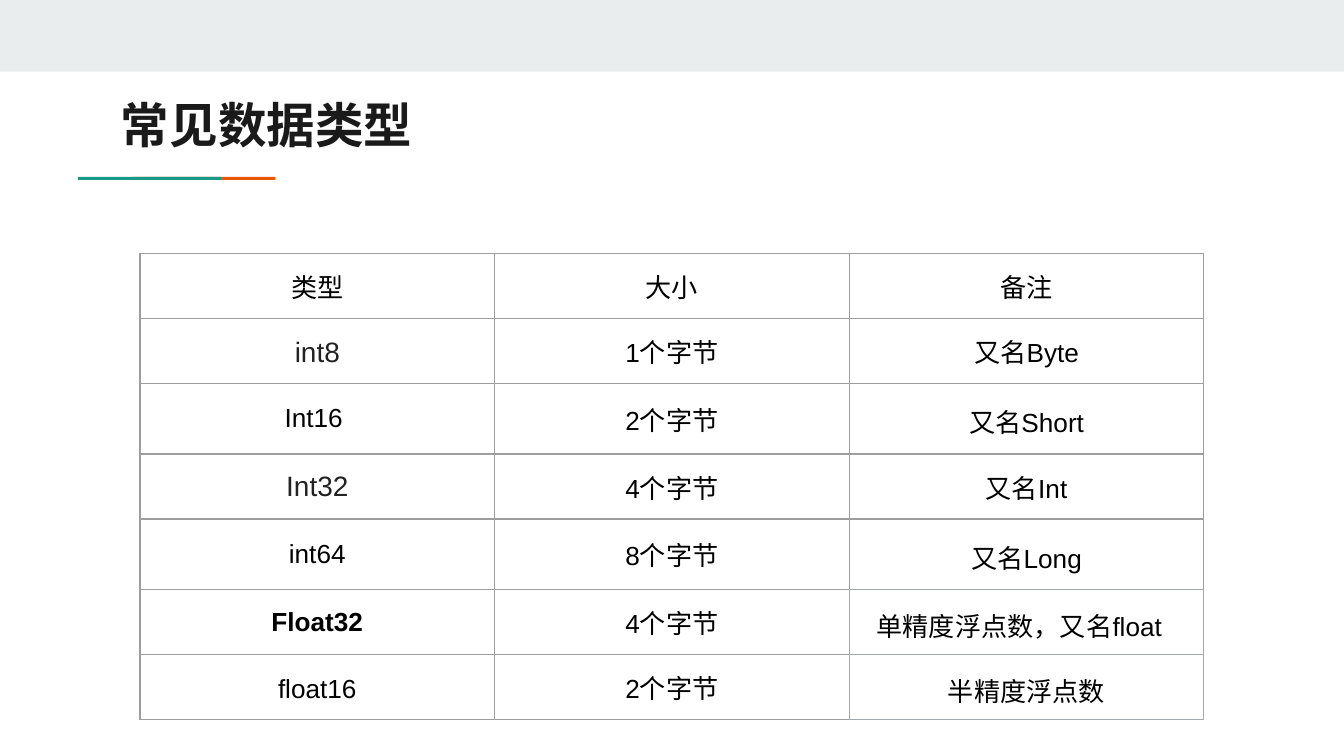
from lxml.etree import SubElement
from pptx import Presentation
from pptx.dml.color import RGBColor
from pptx.enum.shapes import MSO_SHAPE
from pptx.enum.text import MSO_ANCHOR, MSO_AUTO_SIZE, PP_ALIGN
from pptx.oxml.ns import qn
from pptx.util import Pt

# Content
TITLE = "常见数据类型"
ROWS = [
    ("类型", "大小", "备注"),
    ("int8", "1个字节", "又名Byte"),
    ("Int16", "2个字节", "又名Short"),
    ("Int32", "4个字节", "又名Int"),
    ("int64", "8个字节", "又名Long"),
    ("Float32", "4个字节", "单精度浮点数，又名float"),
    ("float16", "2个字节", "半精度浮点数"),
]

# Cells that differ from the rest, as (row, column)
LARGER_GREY = {(1, 0), (3, 0)}
BOLD = {(5, 0)}
LOOSE = {(1, 0), (2, 2), (4, 2), (5, 2), (6, 0), (6, 2)}
COOL = {(5, 2), (6, 2)}
EXTRA_RIGHT_MARGIN = {(2, 0): 3.9, (5, 2): 7.8}

# Style
BAND = RGBColor(0xE9, 0xED, 0xEE)
TEAL = RGBColor(0x1A, 0x99, 0x88)
ORANGE = RGBColor(0xEB, 0x56, 0x00)
TITLE_INK = RGBColor(0x1A, 0x1A, 0x1A)
BLACK = RGBColor(0x00, 0x00, 0x00)
GREY = RGBColor(0x22, 0x22, 0x22)
BORDER = RGBColor(0x9E, 0x9E, 0x9E)
COOL_BORDER = RGBColor(0xA2, 0xA9, 0xB1)

# Geometry in points
TABLE_LEFT, TABLE_TOP = 75, 135.7
COLUMN_WIDTH, ROW_HEIGHT = 190, 30.2
BARS = [  # left, top, width, height, colour; teal overlaps orange
    (0, 0, 720, 38.4, BAND),
    (71, 94.8, 76.6, 1.6, ORANGE),
    (41.8, 94.8, 76.6, 1.6, TEAL),
]


def add_bar(slide, left, top, width, height, color):
    bar = slide.shapes.add_shape(
        MSO_SHAPE.RECTANGLE, Pt(left), Pt(top), Pt(width), Pt(height))
    bar.shadow.inherit = False
    bar.fill.solid()
    bar.fill.fore_color.rgb = color
    bar.line.fill.background()


def set_margins(target, horizontal, vertical, extra_right=0):
    target.margin_left = Pt(horizontal)
    target.margin_right = Pt(horizontal + extra_right)
    target.margin_top = target.margin_bottom = Pt(vertical)


def format_run(run, font_name, size, color, bold):
    run.font.name = font_name
    run.font.size = Pt(size)
    run.font.color.rgb = color
    run.font.bold = bold


def border_color(row, column, side):
    """A cool cell colours its own edges and those it shares."""
    row_step, column_step = {
        "lnL": (0, -1), "lnR": (0, 1), "lnT": (-1, 0), "lnB": (1, 0)}[side]
    neighbour = (row + row_step, column + column_step)
    return COOL_BORDER if COOL & {(row, column), neighbour} else BORDER


def set_borders(cell, row, column):
    properties = cell._tc.get_or_add_tcPr()
    for side in ("lnL", "lnR", "lnT", "lnB"):
        line = SubElement(properties, qn(f"a:{side}"), w=str(Pt(0.75)))
        fill = SubElement(line, qn("a:solidFill"))
        SubElement(fill, qn("a:srgbClr"),
                   val=str(border_color(row, column, side)))


def fill_cell(cell, row, column, text):
    position = (row, column)
    cell.text_frame.text = text
    cell.vertical_anchor = MSO_ANCHOR.MIDDLE if row else MSO_ANCHOR.TOP
    horizontal, vertical = (5.6, 2.8) if position in COOL else (7.2, 7.2)
    set_margins(cell, horizontal, vertical,
                EXTRA_RIGHT_MARGIN.get(position, 0))
    paragraph = cell.text_frame.paragraphs[0]
    paragraph.alignment = PP_ALIGN.CENTER
    if position in LOOSE:
        paragraph.line_spacing = 1.15
    size, color = (15, GREY) if position in LARGER_GREY else (14, BLACK)
    format_run(paragraph.runs[0], "Arial", size, color, position in BOLD)
    set_borders(cell, row, column)
    cell.fill.background()


def add_title(slide):
    title = slide.shapes.title
    title.left, title.top = Pt(57.6), Pt(45)
    title.width, title.height = Pt(605.5), Pt(42.5)
    frame = title.text_frame
    frame.text = TITLE
    frame.word_wrap = True
    frame.auto_size = MSO_AUTO_SIZE.NONE
    frame.vertical_anchor = MSO_ANCHOR.MIDDLE
    set_margins(frame, 7.2, 7.2)
    paragraph = frame.paragraphs[0]
    paragraph.alignment = PP_ALIGN.LEFT
    format_run(paragraph.runs[0], "Manrope", 26, TITLE_INK, True)


def add_type_table(slide):
    row_count, column_count = len(ROWS), len(ROWS[0])
    table = slide.shapes.add_table(
        row_count, column_count, Pt(TABLE_LEFT), Pt(TABLE_TOP),
        Pt(COLUMN_WIDTH * column_count), Pt(ROW_HEIGHT * row_count)).table
    table.first_row = table.horz_banding = False
    for column in table.columns:
        column.width = Pt(COLUMN_WIDTH)
    for row_index, texts in enumerate(ROWS):
        table.rows[row_index].height = Pt(ROW_HEIGHT)
        for column_index, text in enumerate(texts):
            fill_cell(table.cell(row_index, column_index),
                      row_index, column_index, text)


def main():
    presentation = Presentation()
    presentation.slide_width, presentation.slide_height = Pt(720), Pt(405)
    slide = presentation.slides.add_slide(presentation.slide_layouts[5])
    for bar in BARS:
        add_bar(slide, *bar)
    add_title(slide)
    add_type_table(slide)
    presentation.save("out.pptx")


if __name__ == "__main__":
    main()
